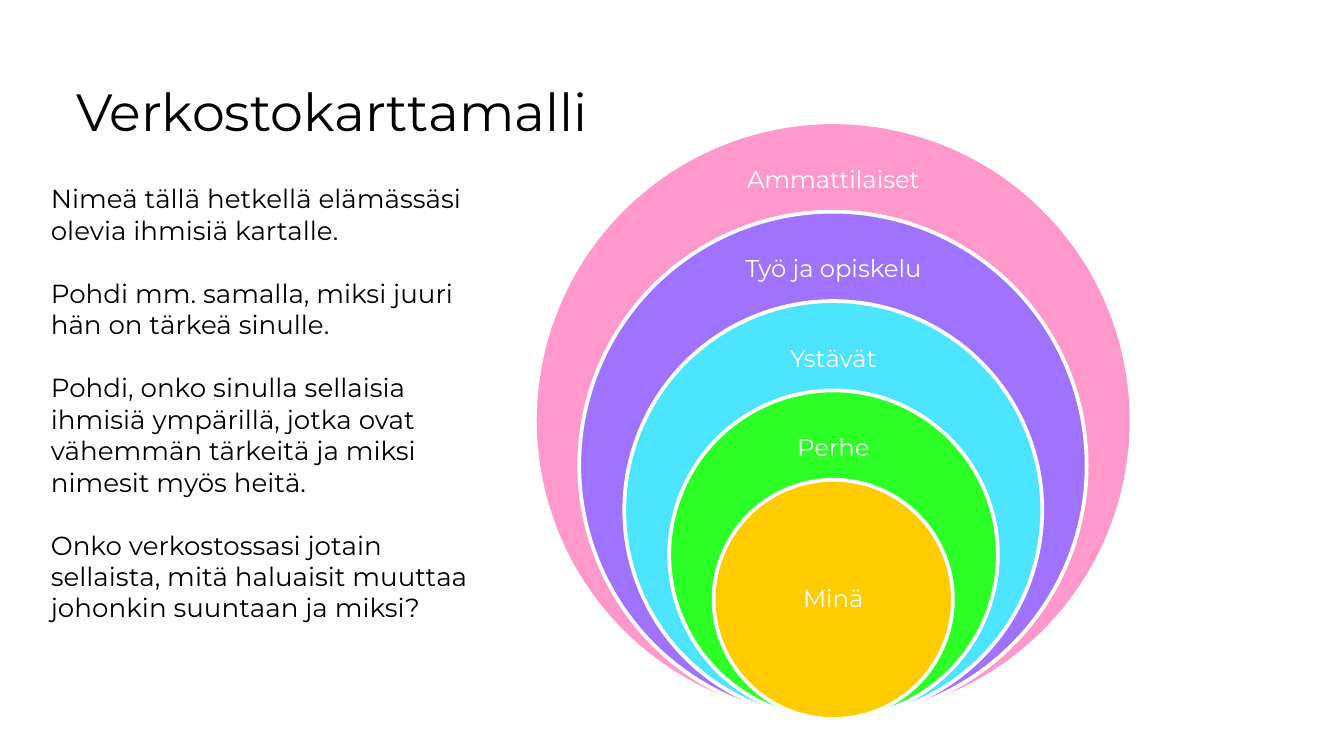
from pptx import Presentation
from pptx import util as u
from pptx.dml.color import RGBColor
from pptx.enum import shapes, text

PX = 4572  # EMU per px, 200 px to the inch
FONT = "Montserrat"
BLACK, WHITE = "000000", "FFFFFF"

TITLE = "Verkostokarttamalli"
QUESTIONS = [
    "Nimeä tällä hetkellä elämässäsi olevia ihmisiä kartalle.",
    "Pohdi mm. samalla, miksi juuri hän on tärkeä sinulle.",
    "Pohdi, onko sinulla sellaisia ihmisiä ympärillä, jotka ovat "
    "vähemmän tärkeitä ja miksi nimesit myös heitä.",
    "Onko verkostossasi jotain sellaista, mitä haluaisit muuttaa "
    "johonkin suuntaan ja miksi?",
]
# label, fill, label width; from the outermost circle inwards
CIRCLES = [
    ("Ammattilaiset", "FF99CC", 334),
    ("Työ ja opiskelu", "A073FF", 326),
    ("Ystävät", "4DE4FF", 322),
    ("Perhe", "2CFF26", 264),
    ("Minä", "FFCC00", 252),
]
CENTER_X, BOTTOM = 1240, 1070
OUTER, INNER = 888, 356


def px(*lengths):
    return [u.Emu(round(n) * PX) for n in lengths]


def color(value):
    return RGBColor.from_string(value)


def add_text(parent, box, paragraphs, size, fill=BLACK, gap=0):
    """Add a wrapped text box with gap points between its paragraphs."""
    tf = parent.add_textbox(*px(*box)).text_frame
    tf.word_wrap = True
    tf.margin_left = tf.margin_right = tf.margin_top = tf.margin_bottom = px(20)[0]
    tf.text = "\n".join(paragraphs)
    for i, p in enumerate(tf.paragraphs):
        if i and gap:
            p.space_before = u.Pt(gap)
        for r in p.runs:
            r.font.name = FONT
            r.font.size = u.Pt(size)
            r.font.color.rgb = color(fill)
    return tf


def add_circle(parent, diameter, fill):
    """Add a circle that stands on the common bottom point."""
    sp = parent.add_shape(
        shapes.MSO_SHAPE.OVAL,
        *px(CENTER_X - diameter / 2, BOTTOM - diameter, diameter, diameter))
    sp.shadow.inherit = False
    sp.fill.solid()
    sp.fill.fore_color.rgb = color(fill)
    sp.line.color.rgb = color(WHITE)
    sp.line.width = u.Pt(2)


def add_label(parent, label, top, width, height):
    tf = add_text(parent, (CENTER_X - width / 2, top, width, height),
                  [label], 13, WHITE)
    tf.vertical_anchor = text.MSO_ANCHOR.MIDDLE
    p = tf.paragraphs[0]
    p.alignment = text.PP_ALIGN.CENTER
    p.line_spacing = 0.9


def add_network_map(parent):
    last = len(CIRCLES) - 1
    for i, (label, fill, width) in enumerate(CIRCLES):
        diameter = OUTER - i * (OUTER - INNER) // last
        top = BOTTOM - diameter
        add_circle(parent, diameter, fill)
        if i < last:
            add_label(parent, label, top + 43, width, 87)
        else:
            add_label(parent, label, top + diameter / 4, width, diameter / 2)


def main():
    prs = Presentation()
    prs.slide_width, prs.slide_height = px(2000, 1125)
    s = prs.slides.add_slide(prs.slide_layouts[6])
    add_text(s.shapes, (94, 98, 1812, 126), [TITLE], 28)
    add_network_map(s.shapes.add_group_shape().shapes)
    add_text(s.shapes, (56, 252, 678, 938), QUESTIONS, 14, gap=17)
    prs.save("out.pptx")


if __name__ == "__main__":
    main()
